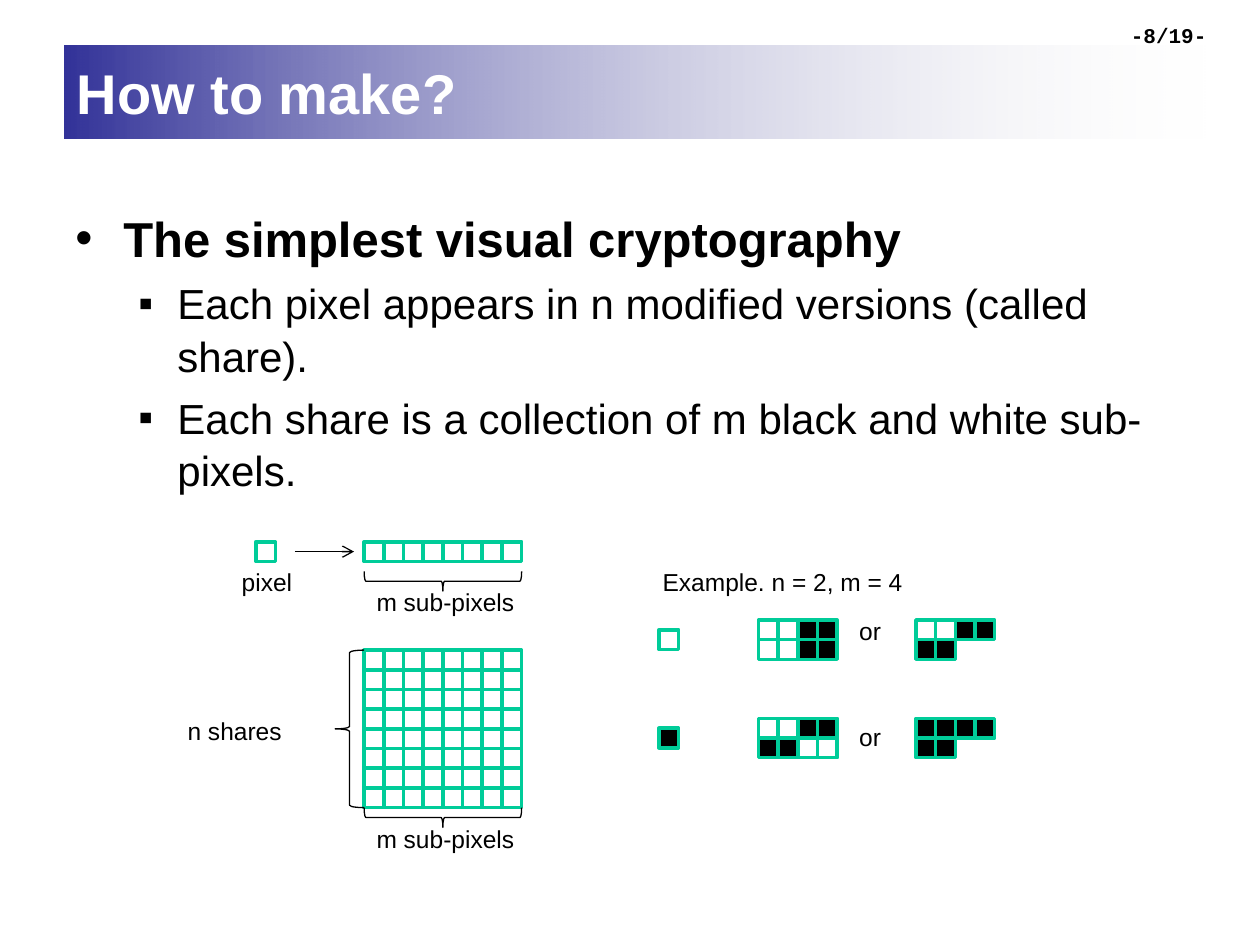
from lxml import etree
from pptx import Presentation
from pptx.dml.color import RGBColor
from pptx.enum.shapes import MSO_CONNECTOR, MSO_SHAPE
from pptx.enum.text import MSO_ANCHOR, MSO_AUTO_SIZE, PP_ALIGN
from pptx.oxml.ns import qn
from pptx.util import Inches, Pt

RECTANGLE, LEFT_BRACE = MSO_SHAPE.RECTANGLE, MSO_SHAPE.LEFT_BRACE
STRAIGHT = MSO_CONNECTOR.STRAIGHT
MIDDLE = MSO_ANCHOR.MIDDLE
NO_AUTOFIT, GROW = MSO_AUTO_SIZE.NONE, MSO_AUTO_SIZE.SHAPE_TO_FIT_TEXT
LEFT, CENTER = PP_ALIGN.LEFT, PP_ALIGN.CENTER

BLACK = RGBColor(0x00, 0x00, 0x00)
WHITE = RGBColor(0xFF, 0xFF, 0xFF)
GREEN = RGBColor(0x00, 0xCC, 0x99)
NAVY = RGBColor(0x33, 0x33, 0x99)
PALE_GRAY = RGBColor(0xEA, 0xEA, 0xEA)

COUNT = 8                            # sub-pixels per share, and shares
GRID_SIDE = Inches(1.25)
PIXEL = GRID_SIDE // COUNT
CELL_FILLS = {"W": WHITE, "B": BLACK, ".": None}

TITLE_FONT = {"name": "Arial", "size": Pt(32), "bold": True}
HEADING_FONT = {"name": "Arial", "size": Pt(28), "bold": True}
POINT_FONT = {"name": "Arial", "size": Pt(24), "bold": False}
LABEL_FONT = {"name": "Arial", "size": Pt(14), "bold": False}
PAGE_FONT = {"name": "Courier New", "size": Pt(12), "bold": True}

# text, font, bullet, left margin, hanging indent, space before
BULLETS = [
    ("The simplest visual cryptography", HEADING_FONT, "•", 0.38, 0.38, 0),
    ("Each pixel appears in n modified versions (called share).",
     POINT_FONT, "▪", 0.81, 0.31, 4.8),
    ("Each share is a collection of m black and white sub-pixels.",
     POINT_FONT, "▪", 0.81, 0.31, 4.8),
]

# pixel, its first share pattern, its second one, top of "or" in the row
EXAMPLES = [
    (".", ["WWBB", "WWBB"], ["WWBB", "BB"], -0.08),
    ("B", ["WWBB", "BB.."], ["BBBB", "BB"], -0.02),
]


def format_font(font, values, color=BLACK):
    for name, value in values.items():
        setattr(font, name, value)
    font.color.rgb = color


def add_title(slide, left, top, width, height):
    title = slide.shapes.title
    title.left, title.top, title.width, title.height = left, top, width, height
    title.fill.gradient()
    title.fill.gradient_angle = 0
    for stop, color in zip(title.fill.gradient_stops, (NAVY, PALE_GRAY)):
        stop.color.rgb = color
    # The gradient fades out at its right end
    last_color = list(title.element.iter(qn("a:srgbClr")))[-1]
    etree.SubElement(last_color, qn("a:alpha"), val="0")

    frame = title.text_frame
    frame.text = "How to make?"
    frame.auto_size = NO_AUTOFIT
    frame.vertical_anchor = MIDDLE
    frame.paragraphs[0].alignment = LEFT
    format_font(frame.paragraphs[0].font, TITLE_FONT, WHITE)


def add_bullets(slide, left, top, width, height):
    frame = slide.shapes.add_textbox(left, top, width, height).text_frame
    frame.word_wrap = True
    for index, (text, font, bullet, margin, hang, before) in enumerate(BULLETS):
        paragraph = frame.add_paragraph() if index else frame.paragraphs[0]
        paragraph.text = text
        paragraph.line_spacing = 1.05
        paragraph.space_before = Pt(before)
        properties = paragraph._p.get_or_add_pPr()
        properties.set("marL", str(Inches(margin)))
        properties.set("indent", str(-Inches(hang)))
        etree.SubElement(properties, qn("a:buFont"), typeface="Arial")
        etree.SubElement(properties, qn("a:buChar"), char=bullet)
        format_font(paragraph.font, font)


def add_page_number(slide, left, top, width, height):
    frame = slide.shapes.add_textbox(left, top, width, height).text_frame
    frame.word_wrap = True
    paragraph = frame.paragraphs[0]
    paragraph.text = "-8/19-"
    paragraph.alignment = CENTER
    format_font(paragraph.font, PAGE_FONT)


def add_label(slide, text, left, top, width):
    frame = slide.shapes.add_textbox(left, top, width, Inches(0.34)).text_frame
    frame.word_wrap = False
    frame.auto_size = GROW
    frame.text = text
    format_font(frame.paragraphs[0].font, LABEL_FONT)


def add_pixel(shapes, kind, left, top):
    pixel = shapes.add_shape(RECTANGLE, left, top, PIXEL, PIXEL)
    pixel.shadow.inherit = False
    if CELL_FILLS[kind] is None:
        pixel.fill.background()
    else:
        pixel.fill.solid()
        pixel.fill.fore_color.rgb = CELL_FILLS[kind]
    pixel.line.color.rgb = GREEN
    pixel.line.width = Pt(2)


def add_grid(slide, rows, left, top):
    """Draw one pixel per letter of each row."""
    group = slide.shapes.add_group_shape()
    for row, kinds in enumerate(rows):
        for column, kind in enumerate(kinds):
            add_pixel(group.shapes, kind, left + column * PIXEL, top + row * PIXEL)


def add_brace(slide, left, top, width, height, rotation=0):
    brace = slide.shapes.add_shape(LEFT_BRACE, left, top, width, height)
    brace.shadow.inherit = False
    brace.rotation = rotation
    brace.fill.background()
    brace.line.color.rgb = BLACK
    brace.line.width = Pt(0.75)


def add_brace_below(slide, left, top):
    """Turn a brace so that it spans the grid width under the given top."""
    shift = (GRID_SIDE - PIXEL) // 2
    add_brace(slide, left + shift, top - shift, PIXEL, GRID_SIDE, 270)
    add_label(slide, "m sub-pixels", left, top + PIXEL // 2, Inches(1.3))


def add_arrow(slide, left, right, y):
    arrow = slide.shapes.add_connector(STRAIGHT, left, y, right, y)
    arrow.line.color.rgb = BLACK
    arrow.line.width = Pt(0.75)
    etree.SubElement(arrow.line._get_or_add_ln(), qn("a:tailEnd"), type="arrow")
    etree.SubElement(arrow.element.spPr, qn("a:effectLst"))


def add_share_diagram(slide, left, top):
    grid_left = left + Inches(1.5)
    grid_top = top + Inches(0.86)
    share = "W" * COUNT

    # One pixel becomes a row of sub-pixels
    add_pixel(slide.shapes, "W", left + Inches(0.64), top)
    add_label(slide, "pixel", left + Inches(0.43), top + Inches(0.15), Inches(0.61))
    add_arrow(slide, left + Inches(0.95), left + Inches(1.42), top + PIXEL // 2)
    add_grid(slide, [share], grid_left, top)
    add_brace_below(slide, grid_left, top + PIXEL * 3 // 2)

    # All shares together
    add_grid(slide, [share] * COUNT, grid_left, grid_top)
    add_brace_below(slide, grid_left, grid_top + GRID_SIDE)
    brace_width = Inches(0.23)
    add_brace(slide, grid_left - brace_width, grid_top, brace_width, GRID_SIDE)
    add_label(slide, "n shares", left, grid_top + Inches(0.47), Inches(0.95))


def add_examples(slide, left, top):
    add_label(slide, "Example. n = 2, m = 4", left, top, Inches(2.12))
    for index, (pixel, first, second, or_shift) in enumerate(EXAMPLES):
        row_top = top + Inches(0.47) + index * 5 * PIXEL
        add_pixel(slide.shapes, pixel, left + Inches(0.07), row_top + PIXEL // 2)
        add_grid(slide, first, left + Inches(0.86), row_top)
        add_label(slide, "or", left + Inches(1.56), row_top + Inches(or_shift), Inches(0.38))
        add_grid(slide, second, left + Inches(2.11), row_top)


def main():
    presentation = Presentation()
    presentation.slide_width, presentation.slide_height = Inches(10), Inches(7.5)
    slide = presentation.slides.add_slide(presentation.slide_layouts[5])
    add_title(slide, Inches(0.51), Inches(0.36), Inches(9.08), Inches(0.74))
    add_bullets(slide, Inches(0.5), Inches(1.58), Inches(9.08), Inches(2.42))
    add_page_number(slide, Inches(8.67), Inches(0.13), Inches(1.21), Inches(0.39))
    add_share_diagram(slide, Inches(1.39), Inches(4.3))
    add_examples(slide, Inches(5.16), Inches(4.45))
    presentation.save("out.pptx")


if __name__ == "__main__":
    main()
